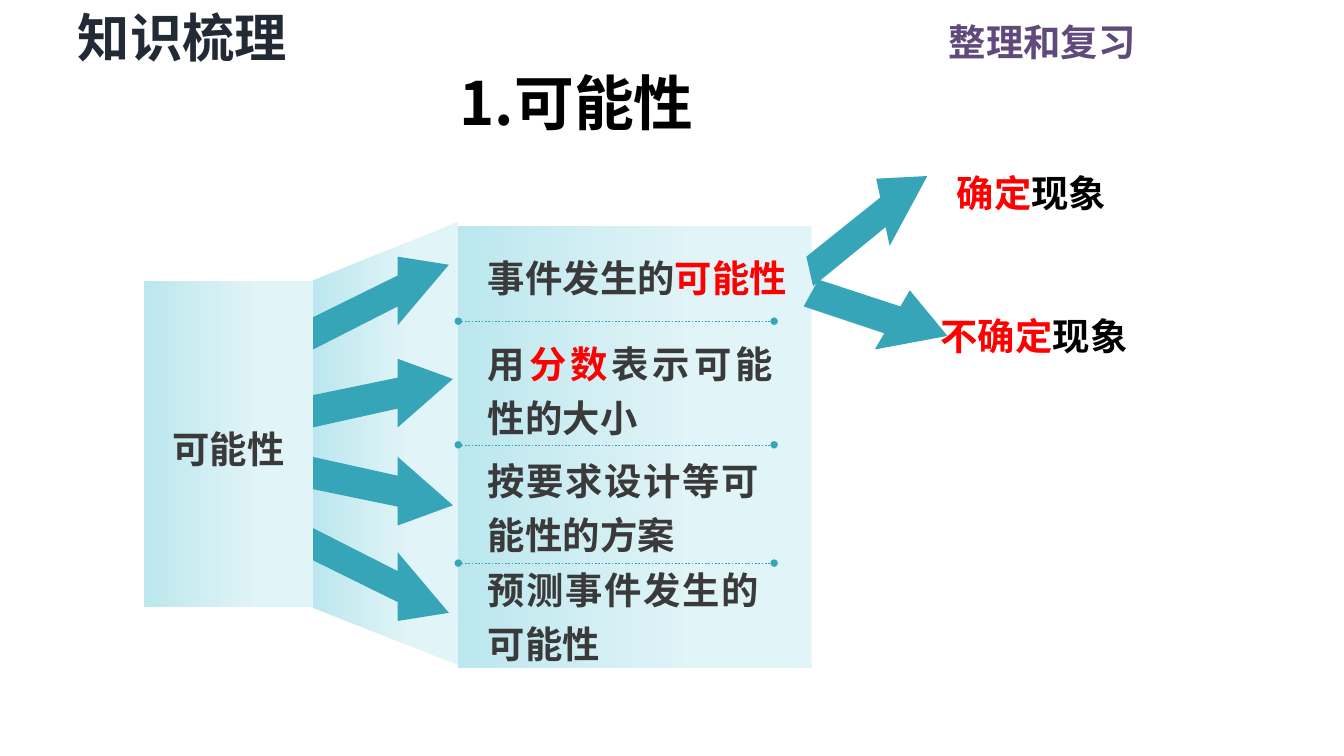
from lxml import etree
from pptx import Presentation
from pptx.dml.color import RGBColor
from pptx.enum.dml import MSO_LINE
from pptx.enum.shapes import MSO_CONNECTOR
from pptx.enum.text import MSO_ANCHOR, MSO_AUTO_SIZE, PP_ALIGN
from pptx.oxml.ns import qn
from pptx.util import Inches, Pt

STRAIGHT = MSO_CONNECTOR.STRAIGHT
DASH = MSO_LINE.DASH
TOP, MIDDLE = MSO_ANCHOR.TOP, MSO_ANCHOR.MIDDLE
FIT_TEXT, NO_FIT = MSO_AUTO_SIZE.SHAPE_TO_FIT_TEXT, MSO_AUTO_SIZE.NONE
LEFT, CENTER, RIGHT, JUSTIFY = PP_ALIGN.LEFT, PP_ALIGN.CENTER, PP_ALIGN.RIGHT, PP_ALIGN.JUSTIFY

FONT = "Noto Sans CJK SC"
COLORS = {
    "review": "604A7B",
    "section": "222A35",
    "black": "000000",
    "body": "3A3A3A",
    "key": "FF0000",
    "teal": "36A5B7",
    "pale": "E1F4F7",
    "aqua": "BCE7EE",
}
DEFAULT_INSETS = (0.1, 0.05)
HEADING_INSETS = (0.07, 0.04)
NO_INSETS = (0, 0)

STEEP_ARROW = [(3.34, 1.97), (2.96, 1.91), (2.96, 2.05), (2.33, 2.36),
               (2.33, 2.6), (2.96, 2.28), (2.96, 2.42)]
GENTLE_ARROW = [(3.37, 2.82), (2.96, 2.67), (2.96, 2.81), (2.33, 2.94),
                (2.33, 3.18), (2.96, 3.04), (2.96, 3.18)]
CERTAIN_ARROW = [(6.9, 1.31), (6.52, 1.33), (6.55, 1.47), (6, 1.91),
                 (6.05, 2.13), (6.59, 1.69), (6.62, 1.83)]
UNCERTAIN_ARROW = [(7.05, 2.5), (6.77, 2.16), (6.7, 2.28), (6.09, 2.08),
                   (5.98, 2.28), (6.58, 2.48), (6.51, 2.6)]


def color(name):
    """Return the named colour."""
    return RGBColor.from_string(COLORS[name])


def write(frame, runs, size=20, align=LEFT, insets=NO_INSETS, anchor=MIDDLE, spacing=1.2):
    """Fill a text frame with one paragraph of (text, colour) runs."""
    frame.word_wrap = True
    frame.vertical_anchor = anchor
    frame.margin_left = frame.margin_right = Inches(insets[0])
    frame.margin_top = frame.margin_bottom = Inches(insets[1])
    paragraph = frame.paragraphs[0]
    paragraph.alignment = align
    paragraph.line_spacing = spacing
    for text, tint in runs:
        run = paragraph.add_run()
        run.text = text
        run.font.size = Pt(size)
        run.font.bold = True
        run.font.color.rgb = color(tint)
        run.font.name = FONT
        etree.SubElement(run.font._element, qn("a:ea"), typeface=FONT)


def add_label(slide, box, runs, auto_size=FIT_TEXT, **style):
    """Add a text box at left, top, width, height."""
    frame = slide.shapes.add_textbox(*map(Inches, box)).text_frame
    write(frame, runs, **style)
    frame.auto_size = auto_size


def add_heading(slide, box, runs, size=20, align=LEFT, insets=DEFAULT_INSETS):
    """Add a single-spaced label that starts at the top of its box."""
    add_label(slide, box, runs, size=size, align=align, insets=insets, anchor=TOP, spacing=1.0)


def add_outline(slide, points):
    """Add a closed polygon without line or shadow."""
    corners = [(Inches(x), Inches(y)) for x, y in points]
    builder = slide.shapes.build_freeform(*corners[0])
    builder.add_line_segments(corners[1:])
    outline = builder.convert_to_shape()
    outline.shadow.inherit = False
    outline.line.fill.background()
    return outline


def add_panel(slide, points):
    """Add a polygon that fades from aqua on the left to pale."""
    panel = add_outline(slide, points)
    panel.fill.gradient()
    panel.fill.gradient_angle = 180
    stops = panel.fill.gradient_stops
    for stop, position, tint in zip(stops, (0.33, 1), ("pale", "aqua")):
        stop.position = position
        stop.color.rgb = color(tint)
    return panel


def add_arrow(slide, points):
    """Add a solid teal arrow."""
    arrow = add_outline(slide, points)
    arrow.fill.solid()
    arrow.fill.fore_color.rgb = color("teal")


def add_divider(slide, y):
    """Add a dashed rule with a small dot at each end."""
    divider = slide.shapes.add_connector(
        STRAIGHT, Inches(3.41), Inches(y), Inches(5.76), Inches(y))
    divider.line.color.rgb = color("teal")
    divider.line.width = Pt(0.25)
    divider.line.dash_style = DASH
    for end in ("a:headEnd", "a:tailEnd"):
        etree.SubElement(divider.line._get_or_add_ln(), qn(end), type="oval", w="sm", len="sm")
    etree.SubElement(divider._element.spPr, qn("a:effectLst"))


def rectangle(left, top, right, bottom):
    """Return the corners of a rectangle."""
    return [(left, top), (right, top), (right, bottom), (left, bottom)]


def flip(points, edge_sum):
    """Mirror points vertically; edge_sum is the top plus the bottom of the pair."""
    return [(x, edge_sum - y) for x, y in points]


def main():
    """Build and save the slide."""
    deck = Presentation()
    deck.slide_width, deck.slide_height = Inches(10), Inches(10 * 9 / 16)
    slide = deck.slides.add_slide(deck.slide_layouts[6])

    add_heading(slide, (5.79, 0.09, 2.76, 0.44), [("整理和复习", "review")], align=RIGHT)
    add_heading(slide, (0.51, 0, 2.02, 0.55), [("知识梳理", "section")], 28, insets=HEADING_INSETS)
    add_heading(slide, (3.35, 0.45, 4.13, 0.61), [("1.可能性", "black")], 32, insets=HEADING_INSETS)

    add_panel(slide, [(3.41, 1.65), (2.33, 2.09), (2.33, 4.52), (3.41, 4.95)])
    add_panel(slide, rectangle(3.41, 1.68, 6.04, 4.97))
    for y in (2.39, 3.31, 4.19):
        add_divider(slide, y)
    for branch, edge_sum in ((GENTLE_ARROW, 6.58), (STEEP_ARROW, 6.53)):
        add_arrow(slide, branch)
        add_arrow(slide, flip(branch, edge_sum))
    topic = add_panel(slide, rectangle(1.07, 2.09, 2.33, 4.52))
    write(topic.text_frame, [("可能性", "body")], align=CENTER)

    points = [
        (1.68, 2.69, LEFT, [("事件发生的", "body"), ("可能性", "key")]),
        (2.52, 2.12, JUSTIFY, [("用", "body"), ("分数", "key"), ("表示可能性的大小", "body")]),
        (3.39, 2.02, JUSTIFY, [("按要求设计等可能性的方案", "body")]),
        (4.2, 2.02, JUSTIFY, [("预测事件发生的可能性", "body")]),
    ]
    for top, width, align, runs in points:
        add_label(slide, (3.63, top, width, 0.71), runs, NO_FIT, align=align)

    add_arrow(slide, CERTAIN_ARROW)
    add_arrow(slide, UNCERTAIN_ARROW)
    add_heading(slide, (7.02, 1.22, 1.45, 0.44), [("确定", "key"), ("现象", "black")])
    add_heading(slide, (6.9, 2.28, 2.01, 0.44), [("不确定", "key"), ("现象", "black")])

    deck.save("out.pptx")


if __name__ == "__main__":
    main()
